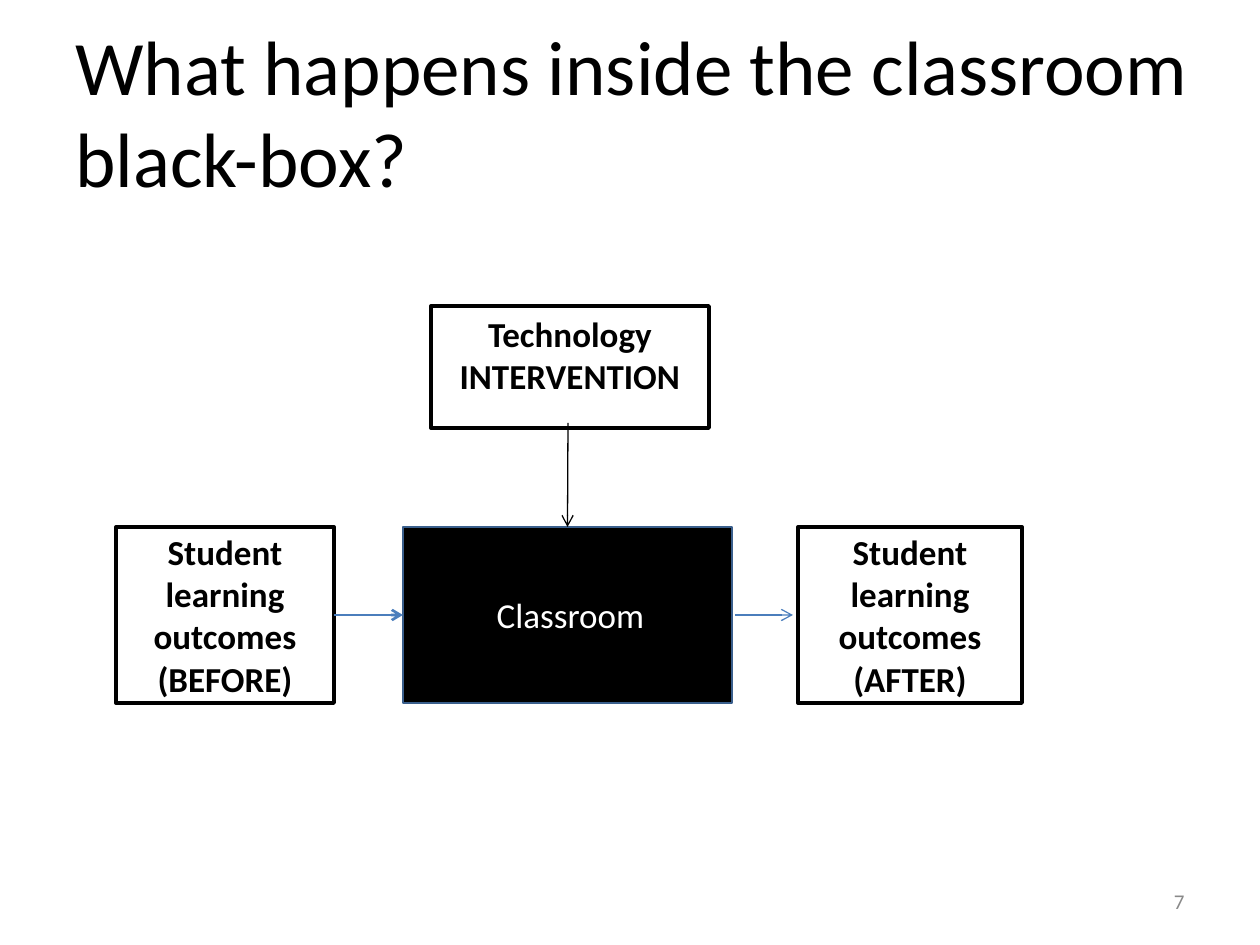
from lxml import etree
from pptx import Presentation
from pptx import util as u
from pptx.dml.color import RGBColor
from pptx.enum import shapes, text
from pptx.oxml.ns import qn

SCALE = u.Inches(1) / 126
BLACK, WHITE, GRAY = "000000", "FFFFFF", "898989"
BLUE, DARK_BLUE = "4B7EBC", "3A5F8C"
TOP, LEFT, RIGHT = 0, 1, 3


def px(length):
    return u.Emu(round(length * SCALE))


def rgb(color):
    return RGBColor.from_string(color)


class Diagram:
    font = "Calibri"

    def __init__(self, presentation):
        self.slide = presentation.slides.add_slide(presentation.slide_layouts[6])

    def set_words(self, shape, words, size, color, align, anchor, bold=False):
        frame = shape.text_frame
        frame.word_wrap = True
        frame.vertical_anchor = anchor
        frame.text = words
        paragraph = frame.paragraphs[0]
        paragraph.alignment = align
        font = paragraph.runs[0].font
        font.name, font.size, font.bold = self.font, u.Pt(size), bold
        font.color.rgb = rgb(color)

    def label(self, box, words, size, color, align=text.PP_ALIGN.LEFT):
        shape = self.slide.shapes.add_textbox(*map(px, box))
        self.set_words(shape, words, size, color, align, text.MSO_ANCHOR.MIDDLE)

    def box(self, box, words="", fill=WHITE, line=BLACK, width=2.25,
            color=BLACK, bold=True, anchor=text.MSO_ANCHOR.MIDDLE):
        shape = self.slide.shapes.add_shape(
            shapes.MSO_SHAPE.RECTANGLE, *map(px, box))
        shape.shadow.inherit = False
        shape.fill.solid()
        shape.fill.fore_color.rgb = rgb(fill)
        if line:
            shape.line.color.rgb = rgb(line)
            shape.line.width = u.Pt(width)
        else:
            shape.line.fill.background()
        if words:
            self.set_words(shape, words, 20, color, text.PP_ALIGN.CENTER, anchor, bold)
        return shape

    def arrow(self, start, end, color, width=0.75, source=None, target=None):
        connector = self.slide.shapes.add_connector(
            shapes.MSO_CONNECTOR.STRAIGHT, *map(px, start + end))
        if source:
            connector.begin_connect(*source)
        if target:
            connector.end_connect(*target)
        connector.line.color.rgb = rgb(color)
        connector.line.width = u.Pt(width)
        properties = connector._element.spPr
        etree.SubElement(properties.find(qn("a:ln")), qn("a:tailEnd"), type="arrow")
        etree.SubElement(properties, qn("a:effectLst"))


def main():
    presentation = Presentation()
    presentation.slide_width, presentation.slide_height = px(1260), px(945)
    diagram = Diagram(presentation)

    diagram.label((63, 21, 1176, 179),
                  "What happens inside the classroom black-box?", 44, BLACK)
    diagram.label((903, 876, 294, 50), "7", 12, GRAY, text.PP_ALIGN.RIGHT)

    row_top, row_height = 527, 176
    middle = row_top + row_height // 2
    diagram.box((431, 306, 278, 122), "Technology INTERVENTION",
                anchor=text.MSO_ANCHOR.TOP)
    classroom = diagram.box((403, row_top, 329, row_height),
                            fill=BLACK, line=DARK_BLUE, width=0.75)
    before = diagram.box((116, row_top, 218, row_height),
                         "Student learning outcomes (BEFORE)")
    diagram.box((481, 585, 179, 59), "Classroom", fill=BLACK, line=None,
                color=WHITE, bold=False)
    diagram.arrow((568, 423), (568, row_top), BLACK, target=(classroom, TOP))
    diagram.arrow((334, middle), (403, middle), BLUE, 1.5,
                  source=(before, RIGHT), target=(classroom, LEFT))
    diagram.arrow((735, middle), (793, middle), BLUE)
    diagram.box((798, row_top, 224, row_height),
                "Student learning outcomes (AFTER)")

    presentation.save("out.pptx")


if __name__ == "__main__":
    main()
